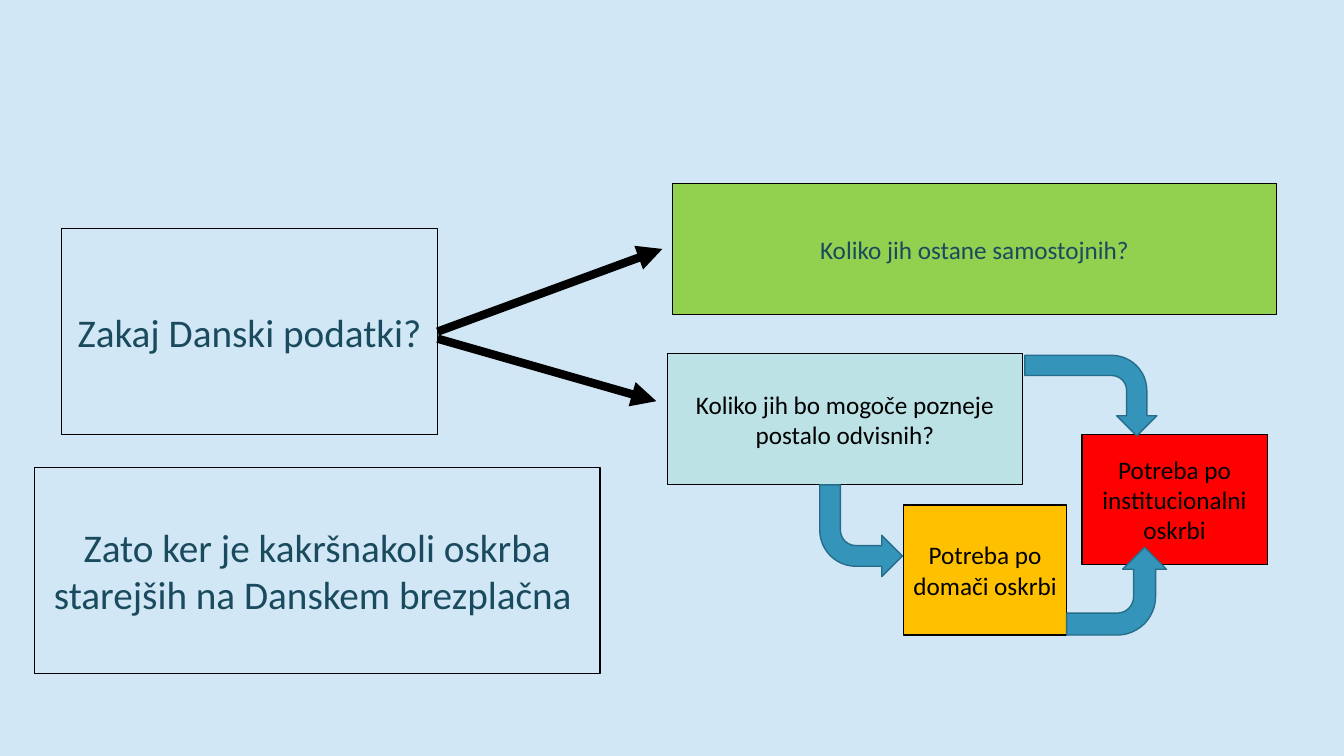
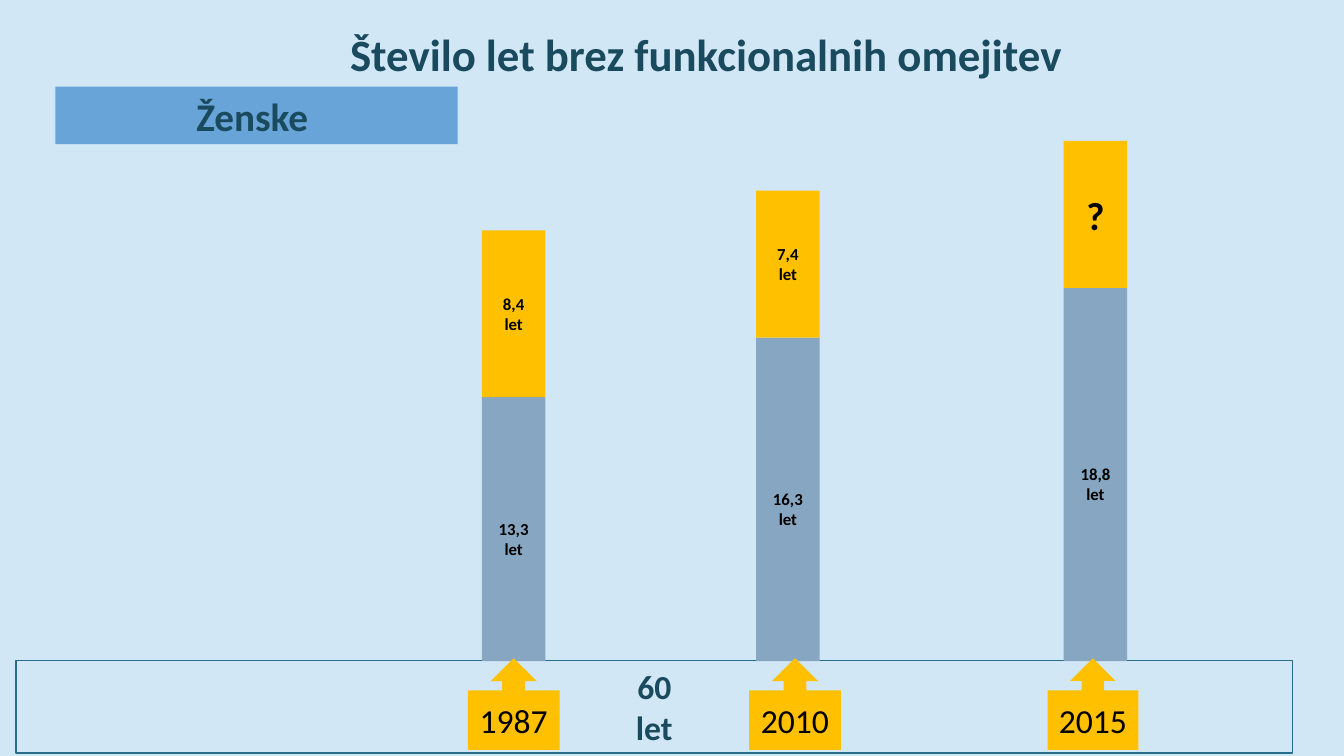
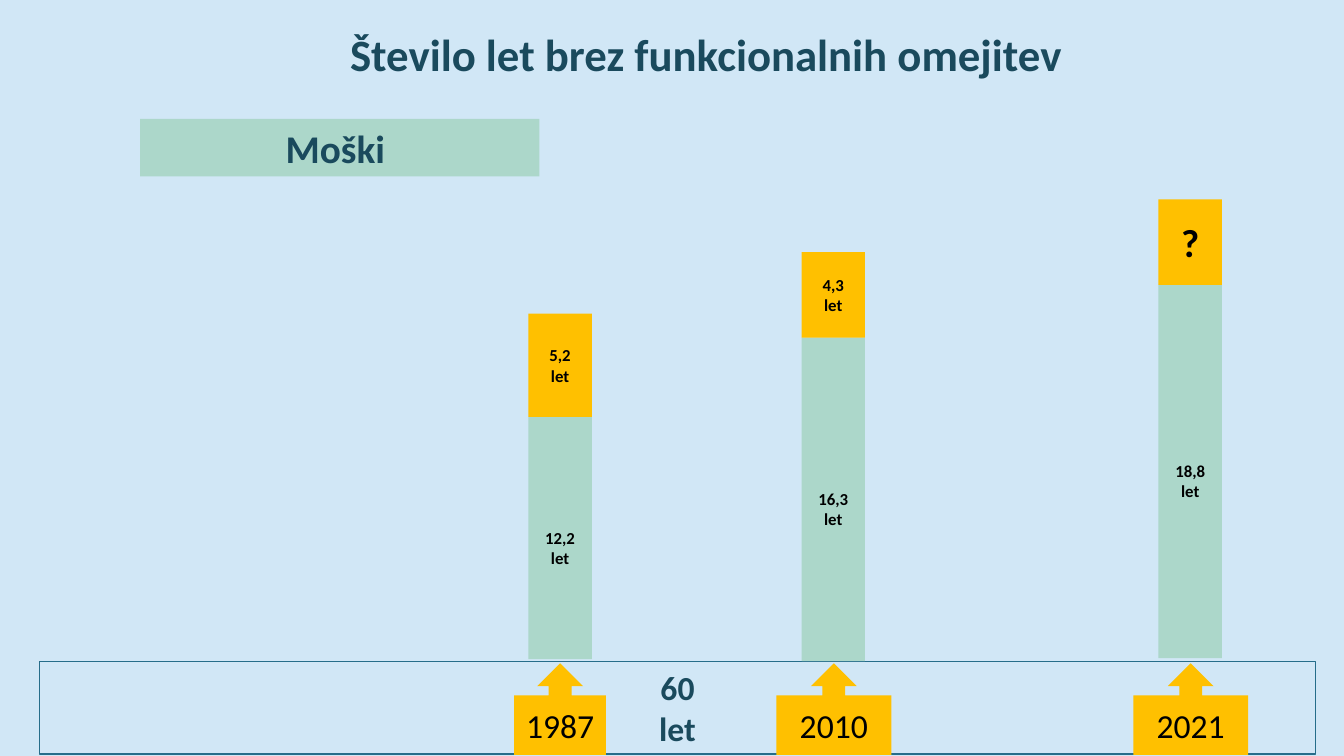
from dataclasses import dataclass

from lxml.etree import SubElement
from pptx import Presentation
from pptx.dml.color import RGBColor
from pptx.enum.shapes import MSO_CONNECTOR, MSO_SHAPE
from pptx.enum.text import MSO_ANCHOR, PP_ALIGN
from pptx.oxml.ns import qn
from pptx.util import Pt

PX = 9144  # 100 px to the inch


@dataclass(frozen=True)
class Theme:
    font: str = "Calibri"
    background: str = "D1E7F6"
    ink: str = "1A4A5D"
    black: str = "000000"
    amber: str = "FFC000"
    green: str = "92D050"
    aqua: str = "BCE2E6"
    red: str = "FF0000"
    arrow: str = "3494BA"
    edge: str = "266D8A"
    women: str = "69A4D9"
    women_bar: str = "86A6C1"
    men: str = "ACD7CA"
    title: int = 32
    large: int = 28
    medium: int = 24
    body: int = 18
    small: int = 12


THEME = Theme()

# text, (left, top, width, height), fill, text colour, size
QUESTION_BOXES = [
    ("Zakaj Danski podatki?", (61, 227, 373, 204), None, THEME.ink, THEME.large),
    ("Koliko jih ostane samostojnih?", (667, 182, 599, 130),
     THEME.green, THEME.ink, THEME.body),
    ("Koliko jih bo mogoče pozneje postalo odvisnih?", (662, 351, 352, 130),
     THEME.aqua, THEME.black, THEME.body),
    ("Potreba po domači oskrbi", (896, 501, 162, 129),
     THEME.amber, THEME.black, THEME.body),
    ("Potreba po institucionalni oskrbi", (1073, 431, 184, 129),
     THEME.red, THEME.black, THEME.body),
    ("Zato ker je kakršnakoli oskrba starejših na Danskem brezplačna ",
     (34, 464, 561, 204), None, THEME.ink, THEME.large),
]
# (left, top, width, height), rotation, flips
BENT_ARROWS = [
    ((813, 481, 82, 91), 180, ("flipH",)),
    ((1064, 537, 87, 99), 90, ("flipH",)),
    ((1042, 327, 80, 131), 270, ("flipH", "flipV")),
]
STRAIGHT_ARROWS = [(434, 329, 657, 247), (434, 336, 651, 398)]

TITLE = "Število let brez funkcionalnih omejitev"
TITLE_FRAME = (174, 15, 1053, 77)
BAR_WIDTH = 63
CALLOUT_HEIGHT = 91
PX_PER_YEAR = 19.7
BAR_LABEL_DROP = 19

# each bar: year, left, bottom, years without limits, further years,
# further label, callout left, callout width
YEARS_SLIDES = [
    {
        "group": "Ženske ", "group_frame": (55, 86, 399, 57),
        "group_fill": THEME.women, "bar_fill": THEME.women_bar,
        "age_frame": (16, 655, 1266, 92), "callout_top": 653,
        "bars": [
            ("1987", 478, 656, 13.3, 8.4, "8,4\nlet", 464, 91),
            ("2010", 750, 656, 16.3, 7.4, "7,4\nlet", 743, 91),
            ("2015", 1055, 656, 18.8, 7.4, "?", 1039, 90),
        ],
    },
    {
        "group": "Moški ", "group_frame": (139, 118, 396, 57),
        "group_fill": THEME.men, "bar_fill": THEME.men,
        "age_frame": (39, 656, 1266, 92), "callout_top": 658,
        "bars": [
            ("1987", 524, 654, 12.2, 5.2, "5,2\nlet", 510, 91),
            ("2010", 795, 656, 16.3, 4.3, "4,3\nlet", 770, 114),
            ("2021", 1149, 653, 18.8, 4.3, "?", 1124, 114),
        ],
    },
]


def emu(*lengths):
    return [round(length * PX) for length in lengths]


def rgb(code):
    return RGBColor.from_string(code)


def write(box, text, size, color, bold=False, drop=0):
    """Centre text in a box; drop is extra space above it in px."""
    frame = box.text_frame
    frame.text = text
    frame.word_wrap = True
    frame.vertical_anchor = MSO_ANCHOR.MIDDLE
    frame.margin_left, frame.margin_right, frame.margin_top = emu(8, 8, 5 + drop)
    for para in frame.paragraphs:
        para.alignment = PP_ALIGN.CENTER
        for span in para.runs:
            span.font.name = THEME.font
            span.font.size = Pt(size)
            span.font.bold = bold
            span.font.color.rgb = rgb(color)


def add_box(page, frame, fill=None, line=None, kind=MSO_SHAPE.RECTANGLE):
    box = page.shapes.add_shape(kind, *emu(*frame))
    box.shadow.inherit = False
    if fill:
        box.fill.solid()
        box.fill.fore_color.rgb = rgb(fill)
    else:
        box.fill.background()
    if line:
        box.line.color.rgb = rgb(line)
        box.line.width = Pt(1)
    else:
        box.line.fill.background()
    return box


def add_straight_arrow(page, ends):
    arrow = page.shapes.add_connector(MSO_CONNECTOR.STRAIGHT, *emu(*ends))
    arrow.line.color.rgb = rgb(THEME.black)
    arrow.line.width = Pt(6)
    SubElement(arrow.line._get_or_add_ln(), qn("a:tailEnd"), type="triangle")
    SubElement(arrow._element.spPr, qn("a:effectLst"))


def add_page(deck):
    page = deck.slides.add_slide(deck.slide_layouts[6])
    page.background.fill.solid()
    page.background.fill.fore_color.rgb = rgb(THEME.background)
    return page


def build_questions(deck):
    page = add_page(deck)
    for text, frame, fill, color, size in QUESTION_BOXES:
        write(add_box(page, frame, fill, THEME.black), text, size, color)
    for frame, rotation, flips in BENT_ARROWS:
        arrow = add_box(page, frame, THEME.arrow, THEME.edge, MSO_SHAPE.BENT_ARROW)
        arrow.rotation = rotation
        for flip in flips:
            arrow._element.spPr.xfrm.set(flip, "1")
    for ends in STRAIGHT_ARROWS:
        add_straight_arrow(page, ends)


def build_years(deck, content):
    page = add_page(deck)
    title = page.shapes.add_textbox(*emu(*TITLE_FRAME))
    write(title, TITLE, THEME.title, THEME.ink, bold=True)
    group = add_box(page, content["group_frame"], content["group_fill"])
    write(group, content["group"], THEME.large, THEME.ink, bold=True)
    age = add_box(page, content["age_frame"], THEME.background, THEME.edge)
    write(age, "60\nlet", THEME.medium, THEME.ink, bold=True)

    for year, left, bottom, free, further, label, tag_left, tag_width in content["bars"]:
        free_height, further_height = free * PX_PER_YEAR, further * PX_PER_YEAR
        top = bottom - free_height
        lower = add_box(page, (left, top, BAR_WIDTH, free_height), content["bar_fill"])
        write(lower, f"{free}\nlet".replace(".", ","), THEME.small, THEME.black,
              bold=True, drop=BAR_LABEL_DROP)
        upper = add_box(page, (left, top - further_height, BAR_WIDTH, further_height),
                        THEME.amber)
        size = THEME.large if label == "?" else THEME.small
        write(upper, label, size, THEME.black, bold=True)
        tag = add_box(page, (tag_left, content["callout_top"], tag_width, CALLOUT_HEIGHT),
                      THEME.amber, kind=MSO_SHAPE.UP_ARROW_CALLOUT)
        write(tag, year, THEME.medium, THEME.black)


def main():
    deck = Presentation()
    deck.slide_width, deck.slide_height = emu(1333, 750)
    build_questions(deck)
    for content in YEARS_SLIDES:
        build_years(deck, content)
    deck.save("out.pptx")


if __name__ == "__main__":
    main()
